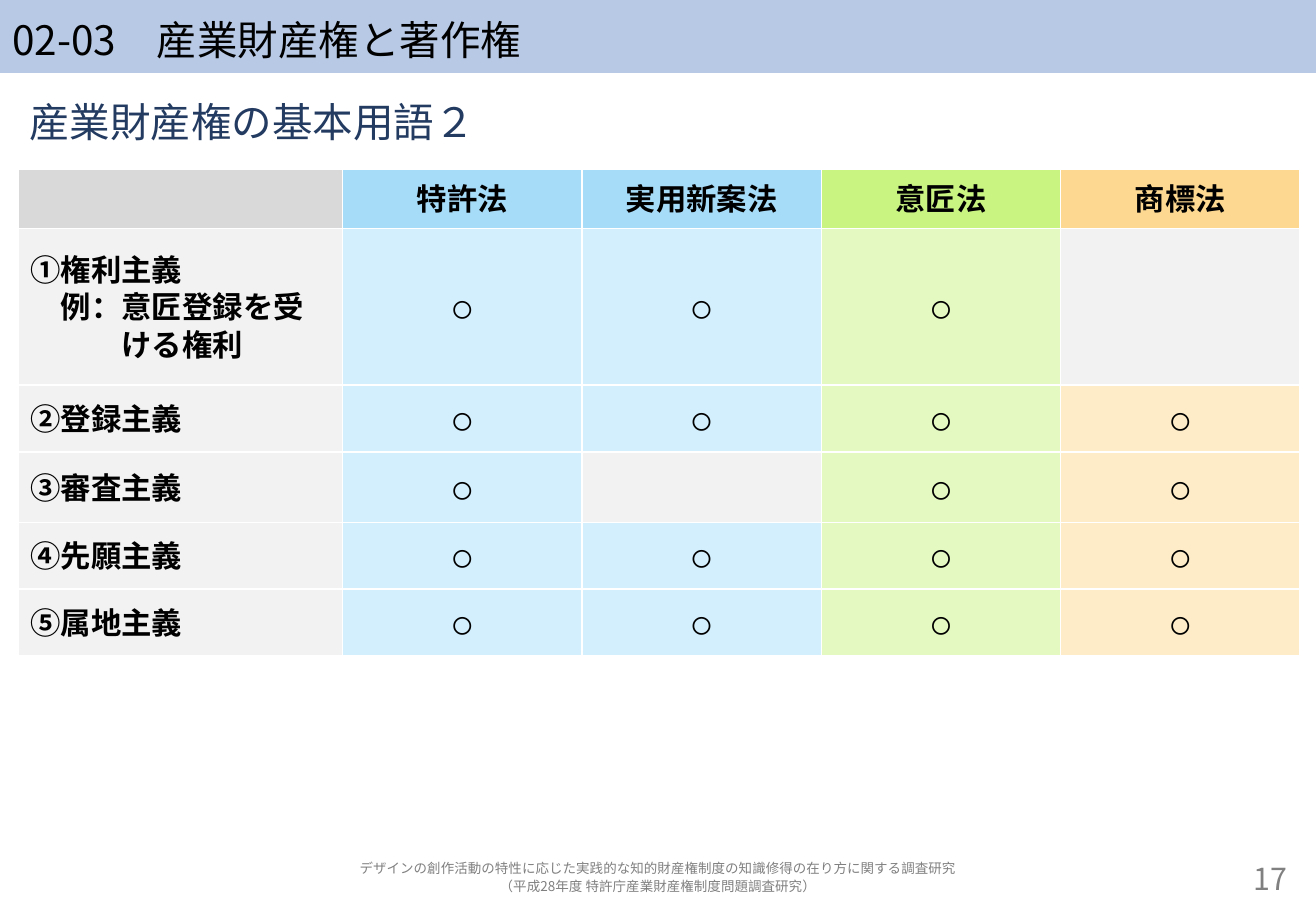
from dataclasses import dataclass

from lxml.etree import SubElement
from pptx import Presentation
from pptx.dml.color import RGBColor
from pptx.enum.text import MSO_ANCHOR as Anchor, MSO_AUTO_SIZE as AutoSize, PP_ALIGN as Align
from pptx.oxml.ns import qn
from pptx.util import Inches, Pt

WIDTH, HEIGHT = 10.83, 7.5
MARGIN = 0.14
CONTENT_WIDTH = WIDTH - 2 * MARGIN
FOOTER_TOP, FOOTER_HEIGHT = 7.06, 0.31
LINE_SPACING = 1.1
CJK = "Noto Sans CJK JP"
LABEL_WIDTH = 2.67
HEADER_HEIGHT = 0.49
MARK = "○"
LABEL_FILL, EMPTY_FILL, CORNER_FILL, BORDER = "F2F2F2", "F2F2F2", "D9D9D9", "FFFFFF"


@dataclass(frozen=True)
class Style:
    size: float
    color: str = "000000"
    font: str = CJK
    bold: bool = False
    align: Align = Align.LEFT
    anchor: Anchor = Anchor.MIDDLE


@dataclass(frozen=True)
class Law:
    name: str
    header_fill: str
    fill: str


@dataclass(frozen=True)
class Principle:
    label: str
    height: float
    excluded: str = ""


LAWS = [
    Law("特許法", "A7DCF9", "D3EEFC"),
    Law("実用新案法", "A7DCF9", "D3EEFC"),
    Law("意匠法", "C9F482", "E4F9C1"),
    Law("商標法", "FCD890", "FDECC7"),
]
PRINCIPLES = [
    Principle("①権利主義\n　例：意匠登録を受\v　　　ける権利", 1.29, "商標法"),
    Principle("②登録主義", 0.55),
    Principle("③審査主義", 0.58, "実用新案法"),
    Principle("④先願主義", 0.55),
    Principle("⑤属地主義", 0.55),
]
LABEL = Style(18, font="Arial", bold=True)
LAW_NAME = Style(18, font="Arial", bold=True, align=Align.CENTER)
CIRCLE = Style(24, font="Arial", align=Align.CENTER)


def rgb(color: str) -> RGBColor:
    return RGBColor.from_string(color)


def write(frame, text: str, style: Style) -> None:
    frame.text = text
    frame.vertical_anchor = style.anchor
    formats = {"size": Pt(style.size), "bold": style.bold, "name": style.font}
    for paragraph in frame.paragraphs:
        paragraph.alignment = style.align
        paragraph.line_spacing = LINE_SPACING
        paragraph.space_before = Pt(0)
        for run in paragraph.runs:
            for key, value in formats.items():
                setattr(run.font, key, value)
            run.font.color.rgb = rgb(style.color)
            SubElement(run.font._element, qn("a:ea"), typeface=style.font)


def place(shape, left: float, top: float, width: float, height: float) -> None:
    box = {"left": left, "top": top, "width": width, "height": height}
    for side, length in box.items():
        setattr(shape, side, Inches(length))
    shape.text_frame.word_wrap = True
    shape.text_frame.auto_size = AutoSize.NONE


def fill_cell(cell, color: str, text: str, style: Style) -> None:
    if text:
        write(cell.text_frame, text, style)
    cell.vertical_anchor = style.anchor
    properties = cell._tc.get_or_add_tcPr()
    for edge in ("a:lnL", "a:lnR", "a:lnT", "a:lnB"):
        line = SubElement(properties, qn(edge), w=str(Pt(1)))
        SubElement(SubElement(line, qn("a:solidFill")), qn("a:srgbClr"), val=BORDER)
    cell.fill.solid()
    cell.fill.fore_color.rgb = rgb(color)


def add_law_table(slide) -> None:
    heights = [HEADER_HEIGHT] + [principle.height for principle in PRINCIPLES]
    law_width = (CONTENT_WIDTH - LABEL_WIDTH) / len(LAWS)
    table = slide.shapes.add_table(
        len(heights), len(LAWS) + 1, Inches(MARGIN + 0.01), Inches(1.39),
        Inches(CONTENT_WIDTH), Inches(sum(heights))).table
    for row, height in zip(table.rows, heights):
        row.height = Inches(height)
    for column, width in zip(table.columns, [LABEL_WIDTH] + [law_width] * len(LAWS)):
        column.width = Inches(width)

    fill_cell(table.cell(0, 0), CORNER_FILL, "", LABEL)
    for c, law in enumerate(LAWS, 1):
        fill_cell(table.cell(0, c), law.header_fill, law.name, LAW_NAME)
    for r, principle in enumerate(PRINCIPLES, 1):
        fill_cell(table.cell(r, 0), LABEL_FILL, principle.label, LABEL)
        for c, law in enumerate(LAWS, 1):
            applies = law.name != principle.excluded
            fill_cell(table.cell(r, c), law.fill if applies else EMPTY_FILL,
                      MARK if applies else "", CIRCLE)


def add_heading(slide) -> None:
    title, subtitle = slide.placeholders
    place(title, 0, 0, WIDTH, 0.6)
    title.fill.solid()
    title.fill.fore_color.rgb = rgb("B7C9E5")
    write(title.text_frame, "02-03　産業財産権と著作権", Style(24))

    place(subtitle, MARGIN, 0.76, CONTENT_WIDTH, 0.47)
    subtitle.text_frame.margin_top = 0
    write(subtitle.text_frame, "産業財産権の基本用語２", Style(24, "233B61", anchor=Anchor.TOP))
    for paragraph in subtitle.text_frame.paragraphs:
        properties = paragraph._p.get_or_add_pPr()
        properties.set("marL", "0")
        properties.set("indent", "0")
        SubElement(properties, qn("a:buNone"))


def add_footer(slide, text: str, left: float, width: float, style: Style) -> None:
    footer = slide.shapes.add_textbox(0, 0, 0, 0)
    place(footer, left, FOOTER_TOP, width, FOOTER_HEIGHT)
    write(footer.text_frame, text, style)


def main() -> None:
    deck = Presentation()
    deck.slide_width, deck.slide_height = Inches(WIDTH), Inches(HEIGHT)
    slide = deck.slides.add_slide(deck.slide_layouts[1])
    add_heading(slide)
    add_law_table(slide)
    number_width = 1.34
    add_footer(slide, "17", WIDTH - MARGIN - number_width, number_width,
               Style(18, "808080", align=Align.RIGHT))
    add_footer(slide, "デザインの創作活動の特性に応じた実践的な知的財産権制度の知識修得の在り方に関する調査研究\n"
               "（平成28年度 特許庁産業財産権制度問題調査研究）", MARGIN, CONTENT_WIDTH,
               Style(8, "808080", align=Align.CENTER))
    deck.save("out.pptx")


if __name__ == "__main__":
    main()
